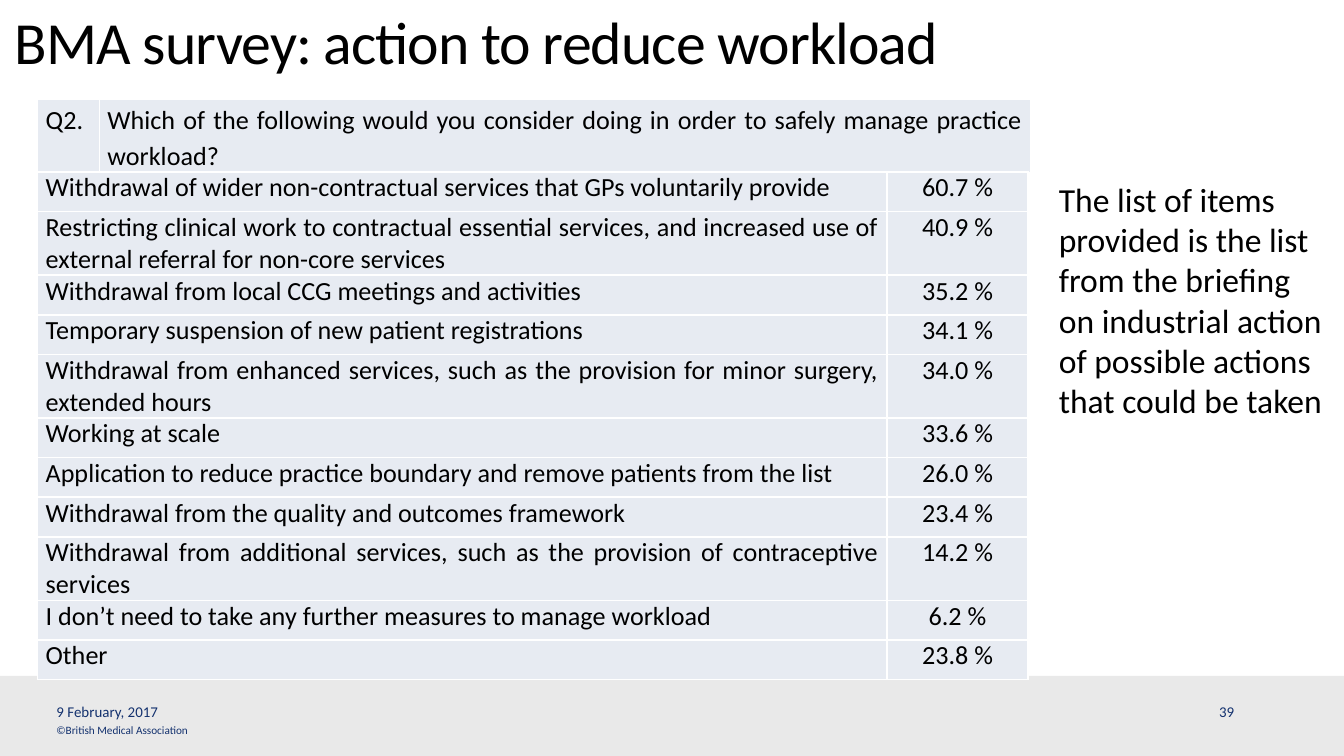
"""Build the survey slide on actions to reduce workload."""
from dataclasses import dataclass, field
from typing import Any

from lxml import etree
from pptx import Presentation, util as u
from pptx.dml.color import RGBColor
from pptx.enum import shapes, text
from pptx.oxml import ns

BLACK = RGBColor(0x00, 0x00, 0x00)
WHITE = RGBColor(0xFF, 0xFF, 0xFF)
NAVY = RGBColor(0x13, 0x31, 0x6E)
BAND_GREY = RGBColor(0xE9, 0xE9, 0xE9)
CELL_BLUE = RGBColor(0xE7, 0xEB, 0xF2)
FONT = "Calibri"
PAGE_WIDTH = u.Inches(10)
PAGE_HEIGHT = u.Emu(PAGE_WIDTH * 9 // 16)
TABLE_LEFT = 0.28
JUSTIFY = text.PP_ALIGN.JUSTIFY
CENTER = text.PP_ALIGN.CENTER

NO_INSETS = dict.fromkeys(("margin_left", "margin_top", "margin_right", "margin_bottom"), 0)
GROW = {"auto_size": text.MSO_AUTO_SIZE.SHAPE_TO_FIT_TEXT}
FOOTER = {**NO_INSETS, **GROW, "vertical_anchor": text.MSO_ANCHOR.MIDDLE}
CELL_INSETS = {**NO_INSETS, "margin_left": u.Inches(0.06), "margin_right": u.Inches(0.06)}


@dataclass
class Label:
    words: str
    place: tuple[float, float, float, float]
    size: float
    color: RGBColor = BLACK
    frame: dict[str, Any] = field(default_factory=dict)
    paragraph: dict[str, Any] = field(default_factory=dict)
    spacing: int = 0


@dataclass
class Grid:
    place: tuple[float, float, float, float]
    widths: tuple[float, ...]
    rows: list[tuple[str, ...]]
    alignments: tuple[text.PP_ALIGN, ...]
    paragraph: dict[str, Any] = field(default_factory=dict)


LABELS = [
    Label("©British Medical Association", (0.42, 5.38, 2.07, 0.1), 6, NAVY, FOOTER),
    Label("9 February, 2017", (0.42, 5.23, 3.17, 0.13), 8, NAVY, FOOTER),
    Label("39", (9.07, 5.23, 0.28, 0.13), 8, NAVY, FOOTER),
    Label("BMA survey: action to reduce workload", (0.11, 0.1, 7.48, 0.54), 32,
          frame=NO_INSETS, paragraph={"line_spacing": u.Pt(34)}, spacing=-50),
    Label("The list of items provided is the list from the briefing on industrial action "
          "of possible actions that could be taken", (7.78, 1.28, 2.21, 2.22), 18, frame=GROW),
]

QUESTION = [("Q2.", "Which of the following would you consider doing in order to safely "
             "manage practice workload?")]
ANSWERS = [
    ("Withdrawal of wider non-contractual services that GPs voluntarily provide", "60.7 %"),
    ("Restricting clinical work to contractual essential services, and increased use of "
     "external referral for non-core services", "40.9 %"),
    ("Withdrawal from local CCG meetings and activities", "35.2 %"),
    ("Temporary suspension of new patient registrations", "34.1 %"),
    ("Withdrawal from enhanced services, such as the provision for minor surgery, "
     "extended hours", "34.0 %"),
    ("Working at scale", "33.6 %"),
    ("Application to reduce practice boundary and remove patients from the list", "26.0 %"),
    ("Withdrawal from the quality and outcomes framework", "23.4 %"),
    ("Withdrawal from additional services, such as the provision of contraceptive services",
     "14.2 %"),
    ("I don’t need to take any further measures to manage workload", "6.2 %"),
    ("Other", "23.8 %"),
]
GRIDS = [
    Grid((TABLE_LEFT, 0.74, 7.39, 0.47), (0.46, 6.93), QUESTION, (JUSTIFY, JUSTIFY),
         {"line_spacing": 1.15}),
    Grid((TABLE_LEFT, 1.28, 7.37, 3.24), (6.32, 1.05), ANSWERS, (JUSTIFY, CENTER)),
]


def apply(target: Any, values: dict[str, Any]) -> None:
    for name, value in values.items():
        setattr(target, name, value)


def write(para: Any, words: str, size: float, color: RGBColor) -> Any:
    span = para.add_run()
    span.text = words
    apply(span.font, {"name": FONT, "size": u.Pt(size)})
    span.font.color.rgb = color
    return span


def add_footer_band(page: Any) -> None:
    band = page.shapes.add_shape(shapes.MSO_SHAPE.RECTANGLE, u.Inches(0), u.Inches(5.03),
                                 PAGE_WIDTH, u.Inches(0.6))
    band.shadow.inherit = False
    band.fill.solid()
    band.fill.fore_color.rgb = BAND_GREY
    band.line.fill.background()


def add_label(page: Any, label: Label) -> None:
    box = page.shapes.add_textbox(*map(u.Inches, label.place))
    frame = box.text_frame
    apply(frame, {"word_wrap": True, **label.frame})
    para = frame.paragraphs[0]
    apply(para, label.paragraph)
    span = write(para, label.words, label.size, label.color)
    if label.spacing:
        span.font._element.set("spc", str(label.spacing))


def add_borders(cell: Any) -> None:
    properties = cell._tc.get_or_add_tcPr()
    for index, side in enumerate(("lnL", "lnR", "lnT", "lnB")):
        line = etree.Element(ns.qn(f"a:{side}"), w=str(u.Pt(1)))
        fill = etree.SubElement(line, ns.qn("a:solidFill"))
        etree.SubElement(fill, ns.qn("a:srgbClr"), val=str(WHITE))
        properties.insert(index, line)


def add_grid(page: Any, grid: Grid) -> None:
    table = page.shapes.add_table(len(grid.rows), len(grid.widths),
                                  *map(u.Inches, grid.place)).table
    apply(table, {"first_row": False, "horz_banding": False})
    for column, width in zip(table.columns, grid.widths):
        column.width = u.Inches(width)
    for row, entries in zip(table.rows, grid.rows):
        for cell, words, alignment in zip(row.cells, entries, grid.alignments):
            apply(cell, CELL_INSETS)
            cell.fill.solid()
            cell.fill.fore_color.rgb = CELL_BLUE
            add_borders(cell)
            para = cell.text_frame.paragraphs[0]
            apply(para, {"alignment": alignment, **grid.paragraph})
            write(para, words, 14, BLACK)


def main() -> None:
    deck = Presentation()
    apply(deck, {"slide_width": PAGE_WIDTH, "slide_height": PAGE_HEIGHT})
    page = deck.slides.add_slide(deck.slide_layouts[6])
    add_footer_band(page)
    for grid in GRIDS:
        add_grid(page, grid)
    for label in LABELS:
        add_label(page, label)
    deck.save("out.pptx")


if __name__ == "__main__":
    main()
